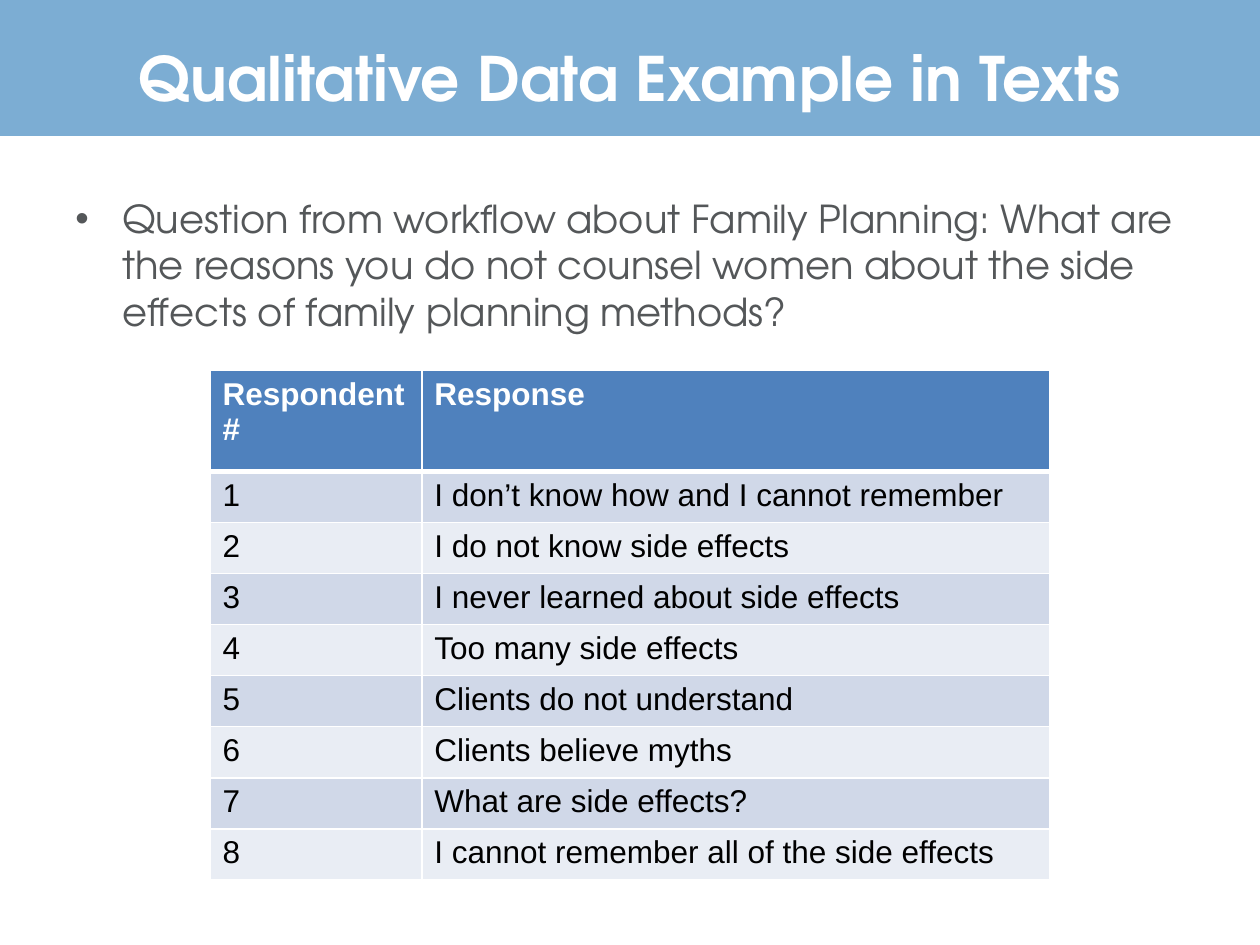
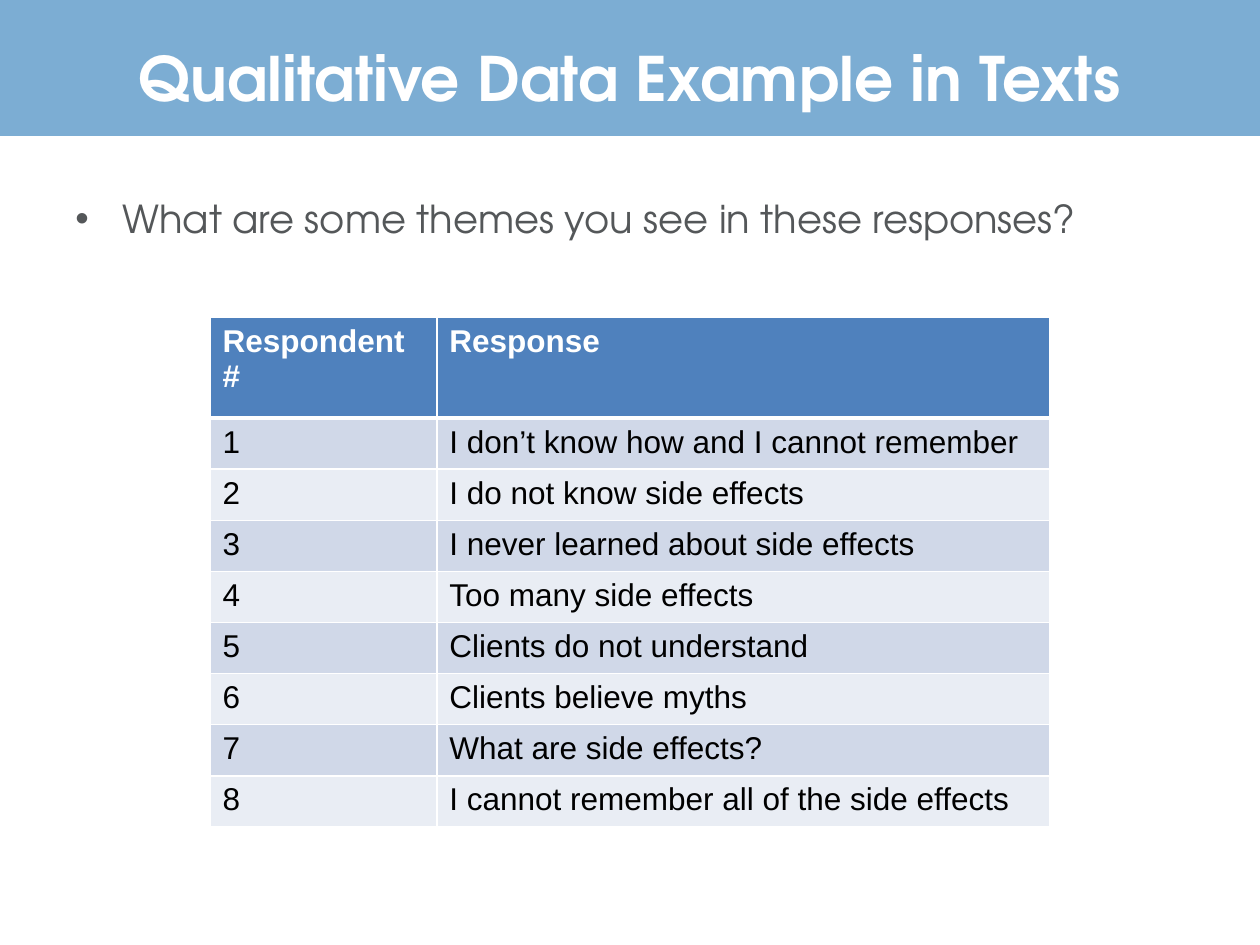
"""Build two slides that show sample answers from a health worker survey."""
from lxml.etree import SubElement
from pptx import Presentation
from pptx.dml.color import RGBColor
from pptx.enum.shapes import MSO_SHAPE
from pptx.enum.text import MSO_ANCHOR, PP_ALIGN
from pptx.oxml.ns import qn
from pptx.util import Cm, Pt

TITLE = "Qualitative Data Example in Texts"
HEADINGS = ("Respondent #", "Response")
RESPONSES = [
    "I don’t know how and I cannot remember",
    "I do not know side effects",
    "I never learned about side effects",
    "Too many side effects",
    "Clients do not understand",
    "Clients believe myths",
    "What are side effects?",
    "I cannot remember all of the side effects",
]
SLIDES = [
    {
        "question": "Question from workflow about Family Planning: What are the reasons "
                    "you do not counsel women about the side effects of family planning methods?",
        "table_top": 7.47,
        "number_width": 4.27,
    },
    {
        "question": "What are some themes you see in these responses?",
        "table_top": 6.4,
        "number_width": 4.57,
    },
]

WIDTH, HEIGHT = 25.4, 19.05
MARGIN = 1.27
BAND_HEIGHT = 2.74
TITLE_TOP = 0.38
QUESTION_TOP, QUESTION_HEIGHT = 3.81, 13.21
TABLE_WIDTH = 16.93
HEADER_HEIGHT, ROW_HEIGHT = 2.03, 1.03
INDENT = 0.95
THIN, THICK = 1, 3

WHITE = "FFFFFF"
BAND_BLUE = "7CADD3"
HEADER_BLUE = "4F81BD"
STRIPES = ("D0D8E8", "E9EDF4")

TITLE_FONT = {"name": "TeX Gyre Adventor", "size": Pt(35), "bold": True}
QUESTION_FONT = {"name": "TeX Gyre Adventor", "size": Pt(22), "bold": False}
HEADER_FONT = {"name": "Arial", "size": Pt(18), "bold": True}
ANSWER_FONT = {**HEADER_FONT, "bold": False}


def rgb(code):
    return RGBColor.from_string(code)


def write(frame, words, font, color):
    paragraph = frame.paragraphs[0]
    run = paragraph.add_run()
    run.text = words
    for key, value in font.items():
        setattr(run.font, key, value)
    run.font.color.rgb = rgb(color)
    return paragraph


def add_text(slide, top, height, words, font, color):
    box = slide.shapes.add_textbox(Cm(MARGIN), Cm(top), Cm(WIDTH - 2 * MARGIN), Cm(height))
    box.text_frame.word_wrap = True
    return box.text_frame, write(box.text_frame, words, font, color)


def add_title(slide):
    band = slide.shapes.add_shape(MSO_SHAPE.RECTANGLE, 0, 0, Cm(WIDTH), Cm(BAND_HEIGHT))
    band.shadow.inherit = False
    band.fill.solid()
    band.fill.fore_color.rgb = rgb(BAND_BLUE)
    band.line.fill.background()
    frame, title = add_text(slide, TITLE_TOP, BAND_HEIGHT - TITLE_TOP, TITLE, TITLE_FONT, WHITE)
    frame.vertical_anchor = MSO_ANCHOR.MIDDLE
    title.alignment = PP_ALIGN.CENTER


def add_question(slide, words):
    _, question = add_text(slide, QUESTION_TOP, QUESTION_HEIGHT, words, QUESTION_FONT, "545759")
    properties = question._p.get_or_add_pPr()
    properties.set("marL", str(Cm(INDENT)))
    properties.set("indent", str(-Cm(INDENT)))
    SubElement(SubElement(properties, qn("a:spcBef")), qn("a:spcPct"), val="20000")
    SubElement(properties, qn("a:buFont"), typeface="Arial")
    SubElement(properties, qn("a:buChar"), char="•")


def set_borders(cell, top, bottom):
    properties = cell._tc.get_or_add_tcPr()
    for side, points in (("L", THIN), ("R", THIN), ("T", top), ("B", bottom)):
        line = SubElement(properties, qn(f"a:ln{side}"), w=str(Pt(points)))
        SubElement(SubElement(line, qn("a:solidFill")), qn("a:srgbClr"), val=WHITE)


def add_responses(slide, top, number_width):
    records = [HEADINGS] + [(str(n), words) for n, words in enumerate(RESPONSES, 1)]
    heights = [HEADER_HEIGHT] + [ROW_HEIGHT] * len(RESPONSES)
    table = slide.shapes.add_table(
        len(records), len(HEADINGS), Cm((WIDTH - TABLE_WIDTH) / 2), Cm(top),
        Cm(TABLE_WIDTH), Cm(sum(heights))).table
    for column, width in zip(table.columns, (number_width, TABLE_WIDTH - number_width)):
        column.width = Cm(width)
    for r, (record, height) in enumerate(zip(records, heights)):
        table.rows[r].height = Cm(height)
        is_header = r == 0
        fill = HEADER_BLUE if is_header else STRIPES[(r - 1) % 2]
        font, color = (HEADER_FONT, WHITE) if is_header else (ANSWER_FONT, "000000")
        for c, words in enumerate(record):
            cell = table.cell(r, c)
            set_borders(cell, THICK if r == 1 else THIN, THICK if is_header else THIN)
            cell.fill.solid()
            cell.fill.fore_color.rgb = rgb(fill)
            write(cell.text_frame, words, font, color)


def main():
    deck = Presentation()
    deck.slide_width, deck.slide_height = Cm(WIDTH), Cm(HEIGHT)
    for content in SLIDES:
        slide = deck.slides.add_slide(deck.slide_layouts[6])
        add_title(slide)
        add_question(slide, content["question"])
        add_responses(slide, content["table_top"], content["number_width"])
    deck.save("out.pptx")


if __name__ == "__main__":
    main()
